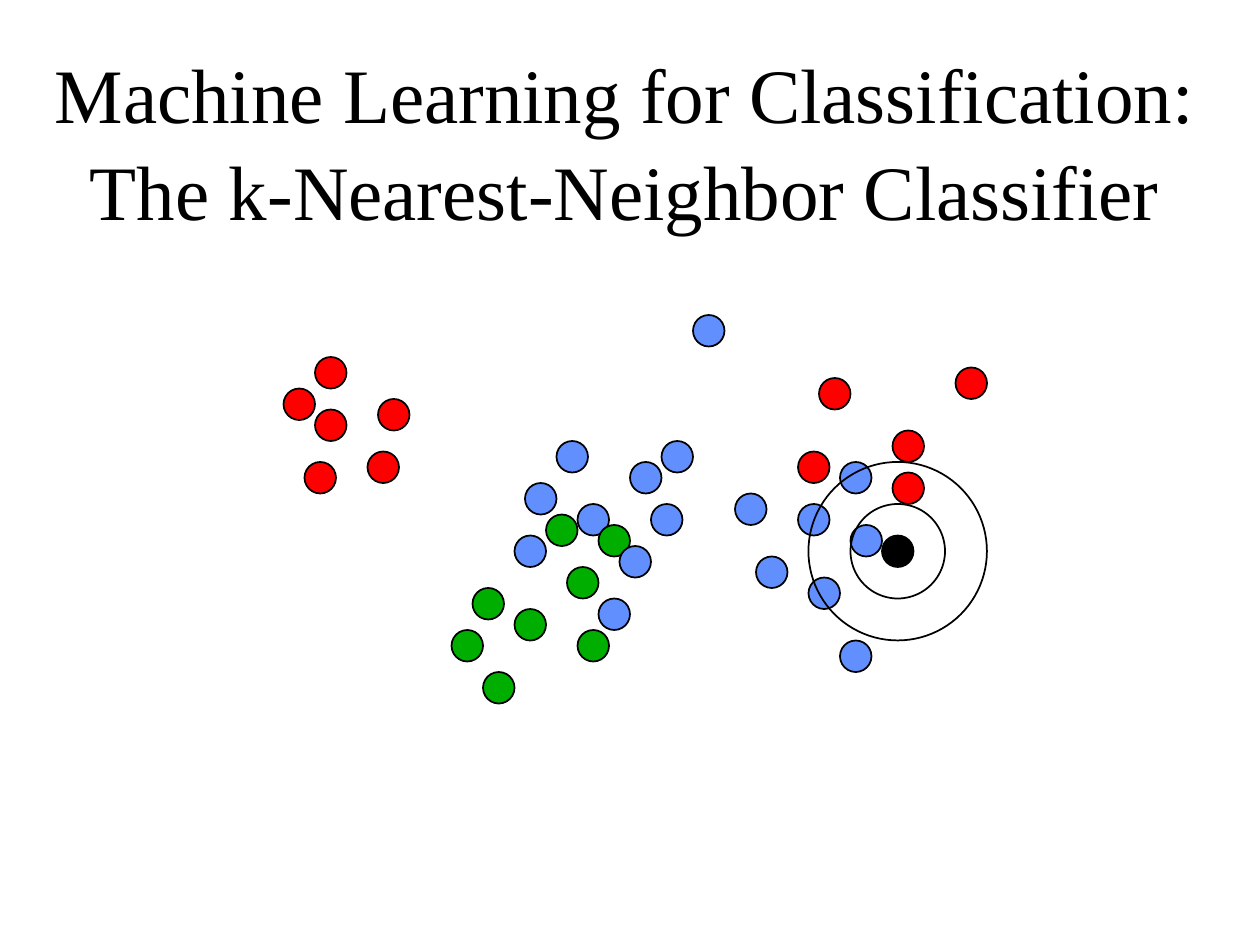
from dataclasses import dataclass

from pptx import Presentation
from pptx.dml.color import RGBColor
from pptx.enum.shapes import MSO_SHAPE
from pptx.enum.text import MSO_ANCHOR, PP_ALIGN
from pptx.util import Inches, Pt

OVAL = MSO_SHAPE.OVAL
MIDDLE = MSO_ANCHOR.MIDDLE
CENTER = PP_ALIGN.CENTER


@dataclass(frozen=True)
class Theme:
    font: str = "Times New Roman"
    title_size: int = 44
    line_width: int = 1
    black: RGBColor = RGBColor(0x00, 0x00, 0x00)
    blue: RGBColor = RGBColor(0x61, 0x8F, 0xFD)
    red: RGBColor = RGBColor(0xFF, 0x00, 0x00)
    green: RGBColor = RGBColor(0x00, 0xAE, 0x00)


THEME = Theme()

# The scatter sits on a grid of twelve steps to the inch
STEPS_PER_INCH = 12
DOT_DIAMETER = 3
RING_DIAMETERS = (9, 17)
QUERY_CENTER = (58.5, 22.5)

# Dot centres in grid steps, from back to front
SAMPLES = [
    (THEME.blue, [(34.5, 15.5), (36.5, 19.5), (46.5, 24.5), (44.5, 18.5),
                  (51.5, 26.5), (50.5, 19.5), (55.5, 21.5), (54.5, 32.5),
                  (54.5, 15.5), (27.5, 13.5), (24.5, 17.5), (29.5, 19.5),
                  (37.5, 13.5)]),
    (THEME.red, [(50.5, 14.5), (59.5, 16.5), (4.5, 5.5), (9.5, 14.5),
                 (10.5, 9.5), (4.5, 10.5), (1.5, 8.5), (3.5, 15.5),
                 (52.5, 7.5), (59.5, 12.5), (65.5, 6.5)]),
    (THEME.green, [(31.5, 21.5)]),
    (THEME.blue, [(33.5, 23.5), (31.5, 28.5), (40.5, 1.5), (23.5, 22.5)]),
    (THEME.green, [(23.5, 29.5), (29.5, 31.5), (17.5, 31.5), (20.5, 35.5),
                   (28.5, 25.5), (19.5, 27.5), (26.5, 20.5)]),
]


def add_title(slide, left, top, width, height):
    title = slide.shapes.add_textbox(left, top, width, height)
    frame = title.text_frame
    frame.word_wrap = True
    frame.vertical_anchor = MIDDLE
    heading = frame.paragraphs[0]
    heading.text = ("Machine Learning for Classification:\v"
                    "The k-Nearest-Neighbor Classifier")
    heading.alignment = CENTER
    heading.line_spacing = 1.05
    heading.font.size = Pt(THEME.title_size)
    for run in heading.runs:
        run.font.name = THEME.font
        run.font.size = Pt(THEME.title_size)
        run.font.color.rgb = THEME.black


def add_circle(shapes, left, top, center, diameter, color=None):
    """Place a circle by its grid centre; without a color it is a ring."""
    x, y = ((c - diameter / 2) / STEPS_PER_INCH for c in center)
    size = Inches(diameter / STEPS_PER_INCH)
    circle = shapes.add_shape(OVAL, left + Inches(x), top + Inches(y),
                              size, size)
    circle.shadow.inherit = False
    if color is None:
        circle.fill.background()
    else:
        circle.fill.solid()
        circle.fill.fore_color.rgb = color
    circle.line.color.rgb = THEME.black
    circle.line.width = Pt(THEME.line_width)


def add_scatter(slide, left, top):
    # Labelled samples
    for color, centers in SAMPLES:
        for center in centers:
            add_circle(slide.shapes, left, top, center, DOT_DIAMETER, color)

    # Query point with its neighborhoods
    query = slide.shapes.add_group_shape().shapes
    add_circle(query, left, top, QUERY_CENTER, DOT_DIAMETER, THEME.black)
    for diameter in RING_DIAMETERS:
        add_circle(query, left, top, QUERY_CENTER, diameter)


def main():
    deck = Presentation()
    deck.slide_width, deck.slide_height = Inches(10), Inches(7.5)
    slide = deck.slides.add_slide(deck.slide_layouts[6])
    add_title(slide, Inches(0), Inches(0.48), Inches(9.92), Inches(1.25))
    add_scatter(slide, Inches(2.25), Inches(2.5))
    deck.save("out.pptx")


if __name__ == "__main__":
    main()
